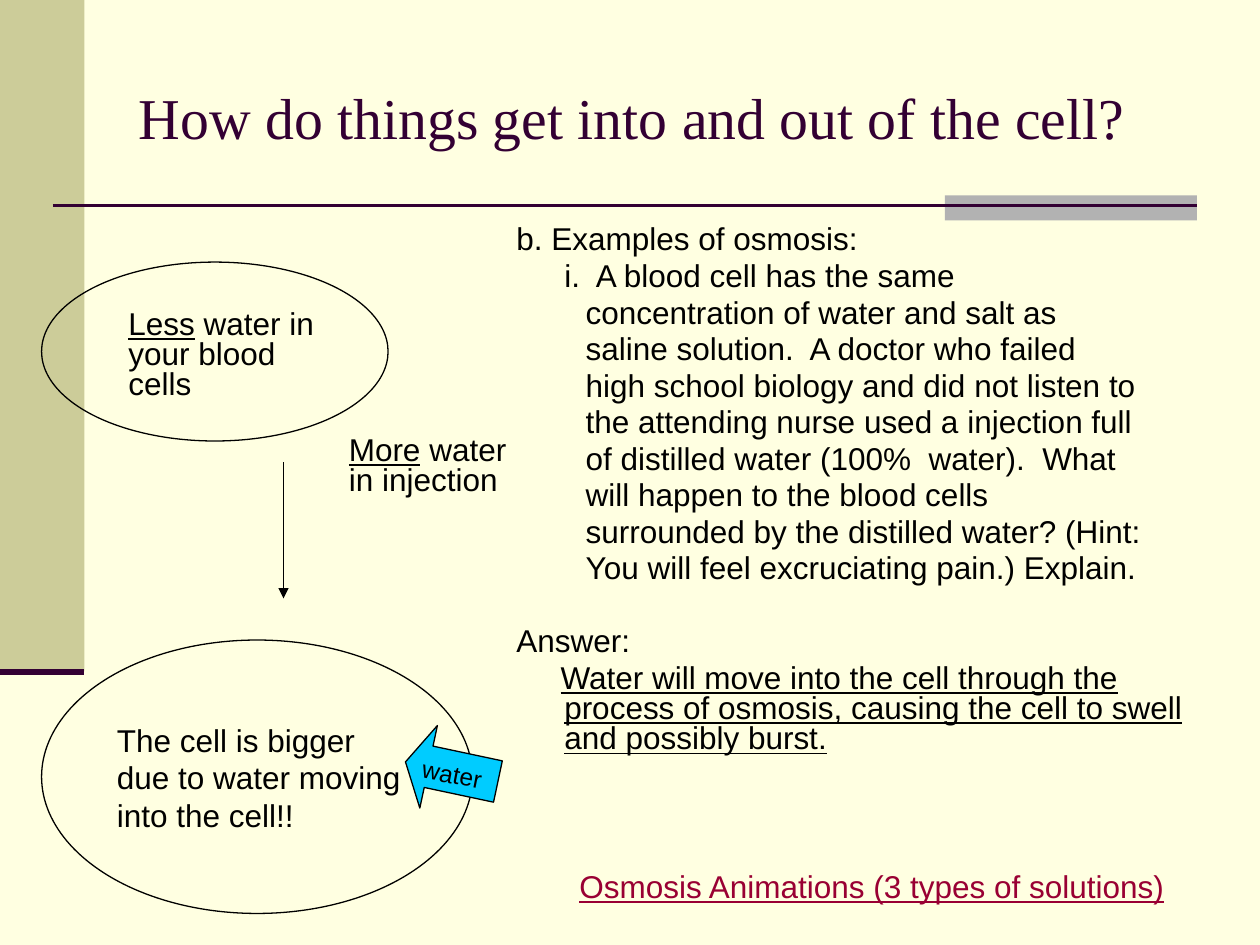
from dataclasses import dataclass

import lxml.etree
import pptx
import pptx.dml.color
import pptx.enum.shapes
import pptx.enum.text
import pptx.oxml.ns
import pptx.util

Inches = pptx.util.Inches
Pt = pptx.util.Pt
Preset = pptx.enum.shapes.MSO_SHAPE

COLORS = {
    "background": "FFFFE1",
    "sidebar": "CCCC99",
    "tab": "B2B2B2",
    "plum": "330033",
    "ink": "000000",
    "link": "990033",
    "water": "00CCFF",
}


@dataclass(frozen=True)
class Box:
    left: float
    top: float
    width: float
    height: float

    def lengths(self) -> tuple:
        return tuple(Inches(v) for v in (self.left, self.top, self.width, self.height))


@dataclass(frozen=True)
class Span:
    text: str
    underline: bool = False
    color: str = "ink"
    size: float = 18
    font: str = "Arial"


@dataclass(frozen=True)
class Para:
    spans: tuple[Span, ...]
    margin: float = 0
    indent: float = 0
    before: float = 0
    spacing: float = 0.8


@dataclass(frozen=True)
class Label:
    box: Box
    paras: tuple[Para, ...]
    wrap: bool = True
    rotation: float = 0


@dataclass(frozen=True)
class Figure:
    preset: Preset
    box: Box
    fill: str | None = None
    outline: str | None = None
    rotation: float = 0
    adjustments: tuple[float, ...] = ()


@dataclass(frozen=True)
class Rule:
    start: tuple[float, float]
    end: tuple[float, float]
    color: str
    width: float
    arrow: bool = False


def rgb(name: str) -> pptx.dml.color.RGBColor:
    return pptx.dml.color.RGBColor.from_string(COLORS[name])


def write_para(paragraph, para: Para) -> None:
    paragraph.alignment = pptx.enum.text.PP_ALIGN.LEFT
    paragraph.line_spacing = para.spacing
    paragraph.space_before = Pt(para.before)
    properties = paragraph._p.get_or_add_pPr()
    properties.set("marL", str(Inches(para.margin)))
    properties.set("indent", str(Inches(para.indent)))
    for span in para.spans:
        run = paragraph.add_run()
        run.text = span.text
        run.font.name = span.font
        run.font.size = Pt(span.size)
        run.font.underline = span.underline
        run.font.color.rgb = rgb(span.color)


def add_label(slide, label: Label) -> None:
    textbox = slide.shapes.add_textbox(*label.box.lengths())
    textbox.rotation = label.rotation
    frame = textbox.text_frame
    frame.word_wrap = label.wrap
    for index, para in enumerate(label.paras):
        write_para(frame.add_paragraph() if index else frame.paragraphs[0], para)


def add_figure(slide, figure: Figure) -> None:
    shape = slide.shapes.add_shape(figure.preset, *figure.box.lengths())
    shape.shadow.inherit = False
    shape.rotation = figure.rotation
    for index, value in enumerate(figure.adjustments):
        shape.adjustments[index] = value
    if figure.fill:
        shape.fill.solid()
        shape.fill.fore_color.rgb = rgb(figure.fill)
    else:
        shape.fill.background()
    if figure.outline:
        shape.line.color.rgb = rgb(figure.outline)
        shape.line.width = Pt(0.75)
    else:
        shape.line.fill.background()


def add_rule(slide, rule: Rule) -> None:
    ends = [Inches(v) for v in rule.start + rule.end]
    line = slide.shapes.add_connector(pptx.enum.shapes.MSO_CONNECTOR.STRAIGHT, *ends)
    line.line.color.rgb = rgb(rule.color)
    line.line.width = Pt(rule.width)
    qn = pptx.oxml.ns.qn
    if rule.arrow:
        lxml.etree.SubElement(line.line._get_or_add_ln(), qn("a:tailEnd"), type="triangle")
    lxml.etree.SubElement(line._element.spPr, qn("a:effectLst"))


def set_title(slide, text: str) -> None:
    title = slide.shapes.title
    title.left, title.top, title.width, title.height = Box(1, 0.3, 8.5, 1.25).lengths()
    frame = title.text_frame
    frame.word_wrap = True
    frame.auto_size = pptx.enum.text.MSO_AUTO_SIZE.NONE
    frame.vertical_anchor = pptx.enum.text.MSO_ANCHOR.MIDDLE
    span = Span(text, color="plum", size=33, font="Times New Roman")
    write_para(frame.paragraphs[0], Para((span,), spacing=1))


DECORATION = (
    Figure(Preset.RECTANGLE, Box(0, 0, 0.67, 5.33), "sidebar"),
    Figure(Preset.RECTANGLE, Box(7.5, 1.55, 2, 0.2), "tab"),
)
RULES = (
    Rule((0.42, 1.63), (9.5, 1.63), "plum", 1.5),
    Rule((0, 5.33), (0.67, 5.33), "plum", 3.5),
    Rule((2.25, 3.67), (2.25, 4.75), "ink", 0.75, arrow=True),
)
CELLS = (
    Figure(Preset.OVAL, Box(0.33, 2.08, 2.75, 1.42), outline="ink"),
    Figure(Preset.OVAL, Box(0.33, 5.08, 3.42, 2.17), outline="ink"),
)
WATER_ARROW = Figure(Preset.DOWN_ARROW, Box(3.25, 5.75, 0.67, 0.75), "water", "ink", 102, (0.5, 0.28))

QUESTION_LINES = (
    "concentration of water and salt as",
    "saline solution.  A doctor who failed",
    "high school biology and did not listen to",
    "the attending nurse used a injection full",
    "of distilled water (100%  water).  What",
    "will happen to the blood cells",
    "surrounded by the distilled water? (Hint:",
    "You will feel excruciating pain.) Explain.",
)
ANSWER = (
    "Water will move into the cell through the process of osmosis, "
    "causing the cell to swell and possibly burst."
)
GAP = 3.6
EXAMPLES = (
    Para((Span("b. Examples of osmosis:"),)),
    Para((Span("i.  A blood cell has the same"),), margin=0.38, before=GAP),
    *(Para((Span(line),), margin=0.55, before=GAP) for line in QUESTION_LINES),
    Para((Span("Answer:"),), before=24.4),
    Para((Span(ANSWER, underline=True),), margin=0.38, indent=-0.03, before=GAP),
)
LABELS = (
    Label(Box(4, 1.75, 5.75, 5.25), EXAMPLES),
    Label(Box(0.92, 2.42, 1.75, 0.82), (Para((Span("Less", True), Span(" water in your blood cells"))),)),
    Label(Box(2.67, 3.42, 1.58, 0.58), (Para((Span("More", True), Span(" water in injection"))),)),
    Label(Box(4.5, 6.83, 4.85, 0.4),
          (Para((Span("Osmosis Animations (3 types of solutions)", True, "link"),), spacing=1),), wrap=False),
    Label(Box(0.83, 5.67, 2.5, 1),
          (Para((Span("The cell is bigger  due to water moving into the cell!!"),), spacing=1),)),
    Label(Box(3.25, 6, 0.92, 0.33), (Para((Span("water", size=14),), spacing=1),), rotation=11.1),
)


def main() -> None:
    deck = pptx.Presentation()
    deck.slide_width, deck.slide_height = Inches(10), Inches(7.5)
    slide = deck.slides.add_slide(deck.slide_layouts[5])
    slide.background.fill.solid()
    slide.background.fill.fore_color.rgb = rgb("background")
    set_title(slide, "How do things get into and out of the cell?")
    for figure in DECORATION:
        add_figure(slide, figure)
    for rule in RULES:
        add_rule(slide, rule)
    for figure in (*CELLS, WATER_ARROW):
        add_figure(slide, figure)
    for label in LABELS:
        add_label(slide, label)
    deck.save("out.pptx")


if __name__ == "__main__":
    main()
